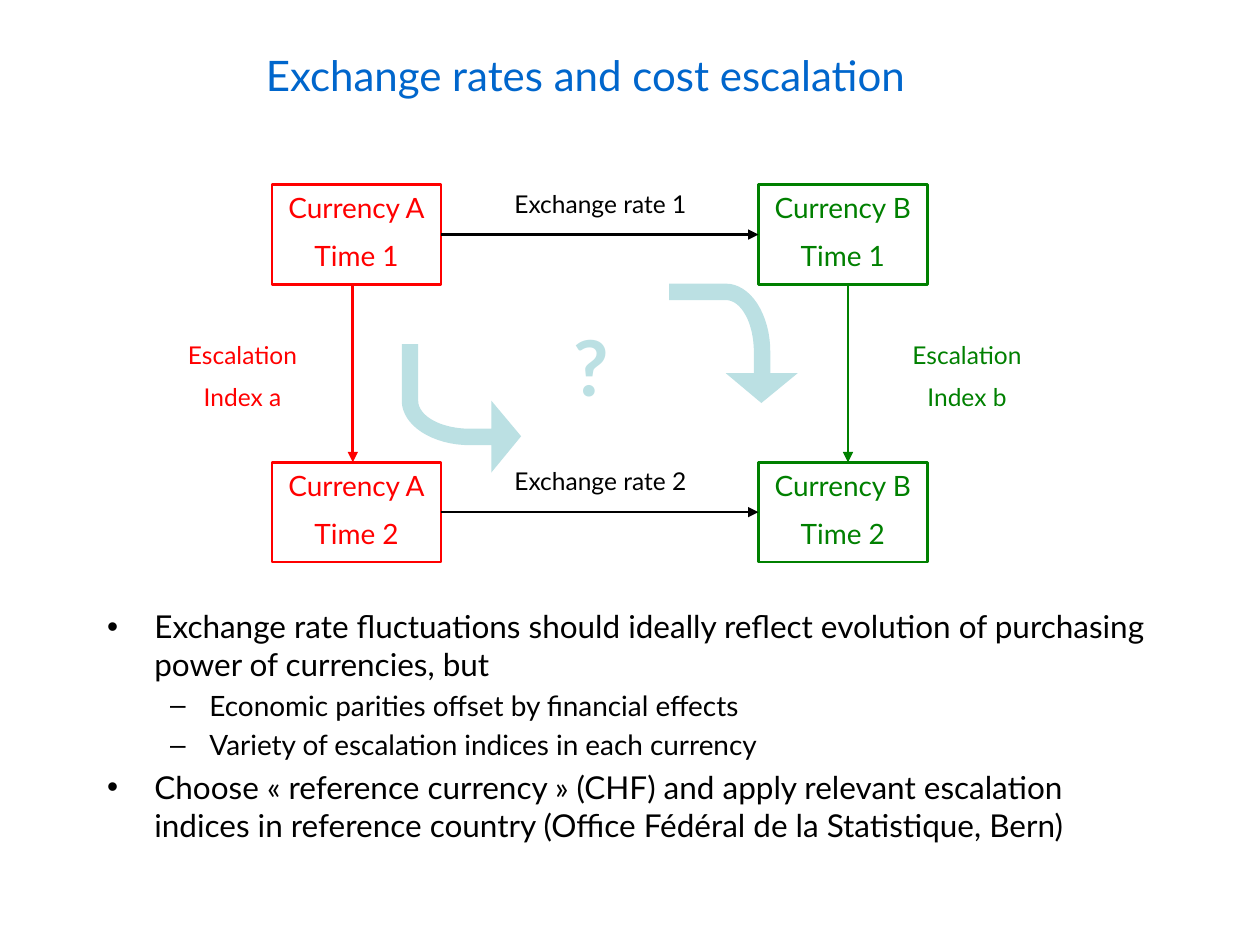
import math

from lxml import etree
from pptx import Presentation
from pptx.dml.color import RGBColor
from pptx.enum.shapes import MSO_CONNECTOR, MSO_SHAPE
from pptx.enum.text import MSO_ANCHOR, MSO_AUTO_SIZE, PP_ALIGN
from pptx.oxml.ns import qn
from pptx.util import Pt

RECT, STRAIGHT = MSO_SHAPE.RECTANGLE, MSO_CONNECTOR.STRAIGHT
CENTER, TOP, MIDDLE = PP_ALIGN.CENTER, MSO_ANCHOR.TOP, MSO_ANCHOR.MIDDLE
NO_FIT = MSO_AUTO_SIZE.NONE
RIGHT_SIDE, LEFT_SIDE = 3, 1

FONT = "Lato"
COLORS = {"title": "0066CC", "black": "000000", "red": "FF0000",
          "green": "008000", "pale": "BBE0E3"}

TITLE = "Exchange rates and cost escalation"
BULLETS = [
    (0, "Exchange rate fluctuations should ideally reflect evolution of "
        "purchasing power of currencies, but"),
    (1, "Economic parities offset by financial effects"),
    (1, "Variety of escalation indices in each currency"),
    (0, "Choose « reference currency » (CHF) and apply relevant escalation "
        "indices in reference country (Office Fédéral de la Statistique, Bern)"),
]
BULLET_SIZES = [18, 16]

# name, colour, box left, escalation arrow x, index name, index label left
CURRENCIES = [("A", "red", 155.5, 201.6, "a", 76.3),
              ("B", "green", 433.4, 484.6, "b", 490.3)]
# time, box top
TIMES = [(1, 105.6), (2, 264.2)]
BOX_W, BOX_H = 96.5, 56.9

# Bent arrow: u runs along the start of the stem, v towards the head
STEM, BEND_U, BEND_V = 9.4, 32.4, 39
OUTER_U, OUTER_V = 25.4, 39
HEAD_V, HEAD = 51.2, [(73.4, 51.2), (52.7, 68.2), (32.4, 51.2)]
# origin x, origin y, whether the stem starts downwards
BENT_ARROWS = [(382.4, 162.1, False), (229.6, 196.6, True)]


def rgb(name):
    return RGBColor.from_string(COLORS[name])


def style(p, size, color, bold=False):
    values = {"name": FONT, "size": Pt(size), "bold": bold}
    for key, value in values.items():
        setattr(p.font, key, value)
    p.font.color.rgb = rgb(color)


def write(s, lines, size, color, bold=False):
    """Centre the lines from the top, with half a line size between them."""
    tf = s.text_frame
    frame = {"word_wrap": True, "auto_size": NO_FIT, "vertical_anchor": TOP}
    for key, value in frame.items():
        setattr(tf, key, value)
    for i, line in enumerate(lines):
        p = tf.paragraphs[0] if i == 0 else tf.add_paragraph()
        p.text = line
        p.alignment = CENTER
        p.space_before = Pt(size / 2 if i else 0)
        style(p, size, color, bold)


def add_label(slide, box, lines, size, color, bold=False):
    write(slide.shapes.add_textbox(*map(Pt, box)), lines, size, color, bold)


def add_box(slide, left, top, lines, color):
    s = slide.shapes.add_shape(RECT, Pt(left), Pt(top), Pt(BOX_W), Pt(BOX_H))
    s.shadow.inherit = False
    s.fill.background()
    s.line.color.rgb = rgb(color)
    s.line.width = Pt(1.5)
    write(s, lines, 16, color)
    return s


def add_arrow(slide, x1, y1, x2, y2, color):
    s = slide.shapes.add_connector(STRAIGHT, Pt(x1), Pt(y1), Pt(x2), Pt(y2))
    s.line.color.rgb = rgb(color)
    s.line.width = Pt(1.5)
    etree.SubElement(s.line._get_or_add_ln(), qn("a:tailEnd"), type="triangle")
    etree.SubElement(s._element.spPr, qn("a:effectLst"))
    return s


def quarter_ellipse(radius_u, radius_v, steps=16):
    angles = [math.pi / 2 * i / steps for i in range(steps + 1)]
    return [(BEND_U + radius_u * math.sin(a), BEND_V - radius_v * math.cos(a))
            for a in angles]


def add_bent_arrow(slide, x, y, downwards):
    outer = quarter_ellipse(OUTER_U, OUTER_V)
    inner = quarter_ellipse(OUTER_U - STEM, OUTER_V - STEM)
    outline = ([(0, 0)] + outer + [(BEND_U + OUTER_U, HEAD_V)] + HEAD
               + [(BEND_U + OUTER_U - STEM, HEAD_V)] + inner[::-1] + [(0, STEM)])
    points = [(x + v, y + u) if downwards else (x + u, y + v)
              for u, v in outline]
    builder = slide.shapes.build_freeform(Pt(x), Pt(y))
    builder.add_line_segments([(Pt(px), Pt(py)) for px, py in points[1:]])
    s = builder.convert_to_shape()
    s.shadow.inherit = False
    s.fill.solid()
    s.fill.fore_color.rgb = rgb("pale")
    s.line.fill.background()


def place(s, left, top, width, height):
    s.left, s.top, s.width, s.height = map(Pt, (left, top, width, height))


def add_title_and_bullets(slide):
    title, body = slide.shapes.title, slide.placeholders[1]
    place(title, 82, 15, 505, 55.5)
    tf = title.text_frame
    tf.text, tf.vertical_anchor, tf.auto_size = TITLE, MIDDLE, NO_FIT
    tf.paragraphs[0].alignment = CENTER
    style(tf.paragraphs[0], 24, "title")

    place(body, 54, 343.5, 618, 158.5)
    tf = body.text_frame
    tf.auto_size = NO_FIT
    for i, (level, text) in enumerate(BULLETS):
        p = tf.paragraphs[0] if i == 0 else tf.add_paragraph()
        p.text, p.level = text, level
        style(p, BULLET_SIZES[level], "black")
    tf.paragraphs[0].space_before = Pt(0)


def add_diagram(slide):
    for time, top in TIMES:
        boxes = [add_box(slide, left, top, [f"Currency {name}", f"Time {time}"],
                         color)
                 for name, color, left, *_ in CURRENCIES]
        y = top + BOX_H / 2
        arrow = add_arrow(slide, CURRENCIES[0][2] + BOX_W, y,
                          CURRENCIES[1][2], y, "black")
        arrow.begin_connect(boxes[0], RIGHT_SIDE)
        arrow.end_connect(boxes[1], LEFT_SIDE)
        add_label(slide, (269.3, top - 1.2, 147.6, 24),
                  [f"Exchange rate {time}"], 14, "black")

    (_, first_top), (_, second_top) = TIMES
    for _, color, _, x, index, label_left in CURRENCIES:
        add_arrow(slide, x, first_top + BOX_H, x, second_top, color)
        add_label(slide, (label_left, 190.8, 124.6, 49),
                  ["Escalation", f"Index {index}"], 14, color)

    for bent_arrow in BENT_ARROWS:
        add_bent_arrow(slide, *bent_arrow)
    add_label(slide, (314.6, 179.3, 56.9, 59.8), ["? "], 44, "pale", bold=True)


def main():
    prs = Presentation()
    prs.slide_width, prs.slide_height = Pt(720), Pt(540)
    slide = prs.slides.add_slide(prs.slide_layouts[1])
    add_title_and_bullets(slide)
    add_diagram(slide)
    prs.save("out.pptx")


if __name__ == "__main__":
    main()
